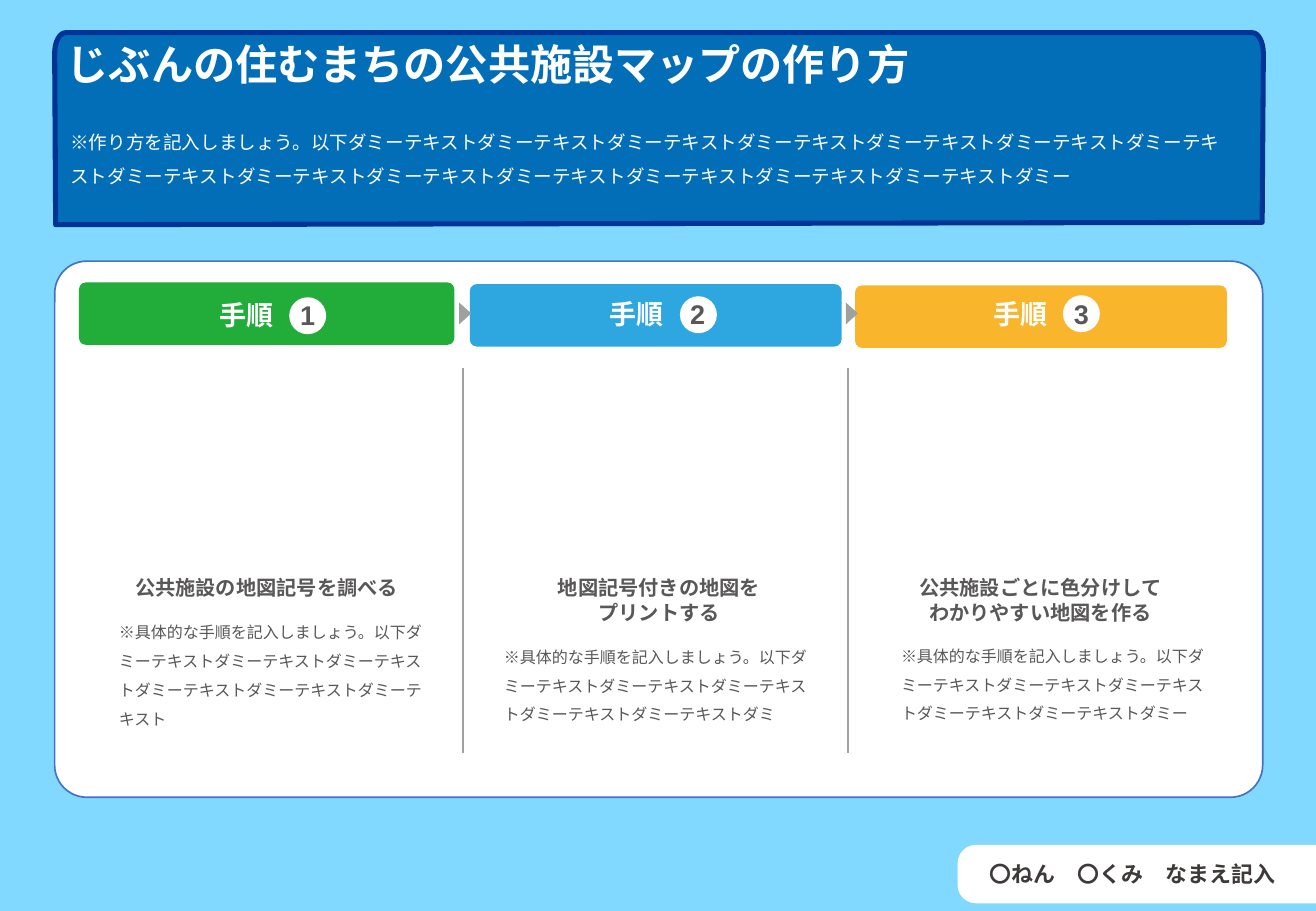
from dataclasses import dataclass
from math import cos, pi, sin

from lxml.etree import SubElement
from pptx import Presentation
from pptx.dml.color import RGBColor
from pptx.enum.shapes import MSO_CONNECTOR, MSO_SHAPE
from pptx.enum.text import MSO_ANCHOR, MSO_AUTO_SIZE, PP_ALIGN
from pptx.oxml.ns import qn
from pptx.shapes.autoshape import Shape
from pptx.slide import Slide
from pptx.text.text import TextFrame
from pptx.util import Pt

SKY = RGBColor(0x82, 0xD9, 0xFF)
BLUE = RGBColor(0x03, 0x6E, 0xB8)
NAVY = RGBColor(0x00, 0x33, 0x96)
OUTLINE = RGBColor(0x44, 0x72, 0xC4)
WHITE = RGBColor(0xFF, 0xFF, 0xFF)
GREEN = RGBColor(0x22, 0xAC, 0x39)
CYAN = RGBColor(0x2E, 0xA7, 0xE1)
AMBER = RGBColor(0xF9, 0xB6, 0x2C)
GRAY = RGBColor(0x9F, 0xA0, 0xA0)
TEXT_GRAY = RGBColor(0x59, 0x57, 0x57)
INK = RGBColor(0x3E, 0x3A, 0x39)
FONT = "Arial"
DUMMY = "ダミーテキスト"


@dataclass(frozen=True)
class Box:
    x: float
    y: float
    w: float
    h: float


@dataclass(frozen=True)
class Step:
    number: int
    color: RGBColor
    bar: Box
    circle: Box
    label: Box
    heading: str
    heading_box: Box
    body: str
    body_box: Box


STEPS = [
    Step(1, GREEN, Box(46.8, 167.4, 222.5, 37), Box(171.4, 176.2, 21.9, 21.9),
         Box(98.6, 173.5, 119.5, 26.6),
         "公共施設の地図記号を調べる", Box(72, 337.7, 172.1, 21.6),
         DUMMY * 6, Box(63.4, 360, 196.6, 75)),
    Step(2, CYAN, Box(278.5, 168.4, 220.3, 37), Box(403, 175.6, 21.9, 21.9),
         Box(329.8, 172.8, 119.5, 26.6),
         "地図記号付きの地図を\nプリントする", Box(304.6, 337.7, 172.1, 36),
         DUMMY * 5 + "ダミ", Box(291.6, 374.4, 196.6, 57.6)),
    Step(3, AMBER, Box(506.9, 169.2, 220.3, 37), Box(630, 175, 21.9, 21.9),
         Box(557.3, 172.8, 119.5, 26.6),
         "公共施設ごとに色分けして\nわかりやすい地図を作る", Box(530.6, 337.7, 172.1, 36),
         DUMMY * 5 + "ダミー", Box(527, 373.8, 196.6, 57.6)),
]
ARROWS = [Box(x, 182.2, 13, 7.2) for x in (269.2, 498.4)]
DIVIDERS = [274.4, 502.6]


def place(sp: Shape, box: Box) -> None:
    sp.left, sp.top, sp.width, sp.height = Pt(box.x), Pt(box.y), Pt(box.w), Pt(box.h)


def style_text(tf: TextFrame, size: float, color: RGBColor, bold: bool = False,
               align: PP_ALIGN = PP_ALIGN.LEFT, spacing: float = 1.0) -> None:
    tf.word_wrap = True
    for p in tf.paragraphs:
        p.alignment = align
        p.line_spacing = spacing
        for r in p.runs:
            r.font.name = FONT
            r.font.size = Pt(size)
            r.font.bold = bold
            r.font.color.rgb = color


def add_text(s: Slide, box: Box, text: str, size: float, color: RGBColor,
             bold: bool = False, align: PP_ALIGN = PP_ALIGN.LEFT,
             spacing: float = 1.0) -> TextFrame:
    sp = s.shapes.add_textbox(Pt(box.x), Pt(box.y), Pt(box.w), Pt(box.h))
    tf = sp.text_frame
    tf.text = text
    style_text(tf, size, color, bold, align, spacing)
    return tf


def add_panel(s: Slide, kind: MSO_SHAPE, box: Box, fill: RGBColor) -> Shape:
    sp = s.shapes.add_shape(kind, Pt(box.x), Pt(box.y), Pt(box.w), Pt(box.h))
    sp.shadow.inherit = False
    sp.fill.solid()
    sp.fill.fore_color.rgb = fill
    sp.line.fill.background()
    return sp


def add_banner(s: Slide) -> None:
    left, right, top, rx, ry = 32.4, 748.8, 19.4, 6.5, 12.2
    turns = [i * pi / 16 for i in range(9)]
    outline = [(left + rx - rx * cos(t), top + ry - ry * sin(t)) for t in turns]
    outline += [(right - rx + rx * sin(t), top + ry - ry * cos(t)) for t in turns]
    outline += [(748.1, 131.8), (33, 133.2)]
    points = [(Pt(x), Pt(y)) for x, y in outline]
    builder = s.shapes.build_freeform(*points[0])
    builder.add_line_segments(points[1:], close=True)
    sp = builder.convert_to_shape()
    sp.shadow.inherit = False
    sp.fill.solid()
    sp.fill.fore_color.rgb = BLUE
    sp.line.color.rgb = NAVY
    sp.line.width = Pt(3)


def add_title(s: Slide, text: str) -> None:
    sp = s.shapes.title
    sp.element.getparent().append(sp.element)
    place(sp, Box(32.4, 19.4, 716, 44))
    tf = sp.text_frame
    tf.text = text
    tf.auto_size = MSO_AUTO_SIZE.NONE
    tf.vertical_anchor = MSO_ANCHOR.TOP
    style_text(tf, 25, WHITE, bold=True)


def add_divider(s: Slide, x: float) -> None:
    line = s.shapes.add_connector(MSO_CONNECTOR.STRAIGHT, Pt(x), Pt(218.2), Pt(x), Pt(446.4))
    line.line.color.rgb = GRAY
    line.line.width = Pt(0.75)
    SubElement(line.element.spPr, qn("a:effectLst"))


def add_step(s: Slide, step: Step) -> None:
    bar = add_panel(s, MSO_SHAPE.ROUNDED_RECTANGLE, step.bar, step.color)
    bar.adjustments[0] = 0.11
    add_panel(s, MSO_SHAPE.OVAL, step.circle, WHITE)
    tf = add_text(s, step.label, "手順\u3000".replace("\u3000", "　"), 16, WHITE, True, PP_ALIGN.CENTER)
    r = tf.paragraphs[0].add_run()
    r.text = str(step.number)
    r.font.name = FONT
    r.font.size = Pt(16)
    r.font.bold = True
    r.font.color.rgb = TEXT_GRAY
    add_text(s, step.heading_box, step.heading, 12, TEXT_GRAY, True, PP_ALIGN.CENTER)
    add_text(s, step.body_box, "※具体的な手順を記入しましょう。以下" + step.body,
             9.5, TEXT_GRAY, spacing=1.5)


def main() -> None:
    prs = Presentation()
    prs.slide_width, prs.slide_height = Pt(780), Pt(540)
    s = prs.slides.add_slide(prs.slide_layouts[5])
    s.background.fill.solid()
    s.background.fill.fore_color.rgb = SKY

    add_banner(s)
    add_title(s, "じぶんの住むまちの公共施設マップの作り方")
    add_text(s, Box(34.6, 67.7, 702, 45.4),
             "※作り方を記入しましょう。以下" + DUMMY * 14 + "ダミー", 11, WHITE, spacing=1.5)

    card = add_panel(s, MSO_SHAPE.ROUNDED_RECTANGLE, Box(32.4, 154.8, 716, 317.8), WHITE)
    card.adjustments[0] = 0.06
    card.line.color.rgb = OUTLINE
    card.line.width = Pt(1)

    for step in STEPS:
        add_step(s, step)
    for box in ARROWS:
        add_panel(s, MSO_SHAPE.ISOSCELES_TRIANGLE, box, GRAY).rotation = 90
    for x in DIVIDERS:
        add_divider(s, x)

    tag = add_panel(s, MSO_SHAPE.ROUND_2_SAME_RECTANGLE, Box(656.5, 411.9, 34.6, 212.4), WHITE)
    tag.rotation = 270
    tag.adjustments[0] = 0.31
    tf = add_text(s, Box(579.6, 507.6, 200.4, 20.9), "〇ねん　〇くみ　なまえ記入", 13, INK, True)
    tf.vertical_anchor = MSO_ANCHOR.MIDDLE

    prs.save("out.pptx")


if __name__ == "__main__":
    main()
